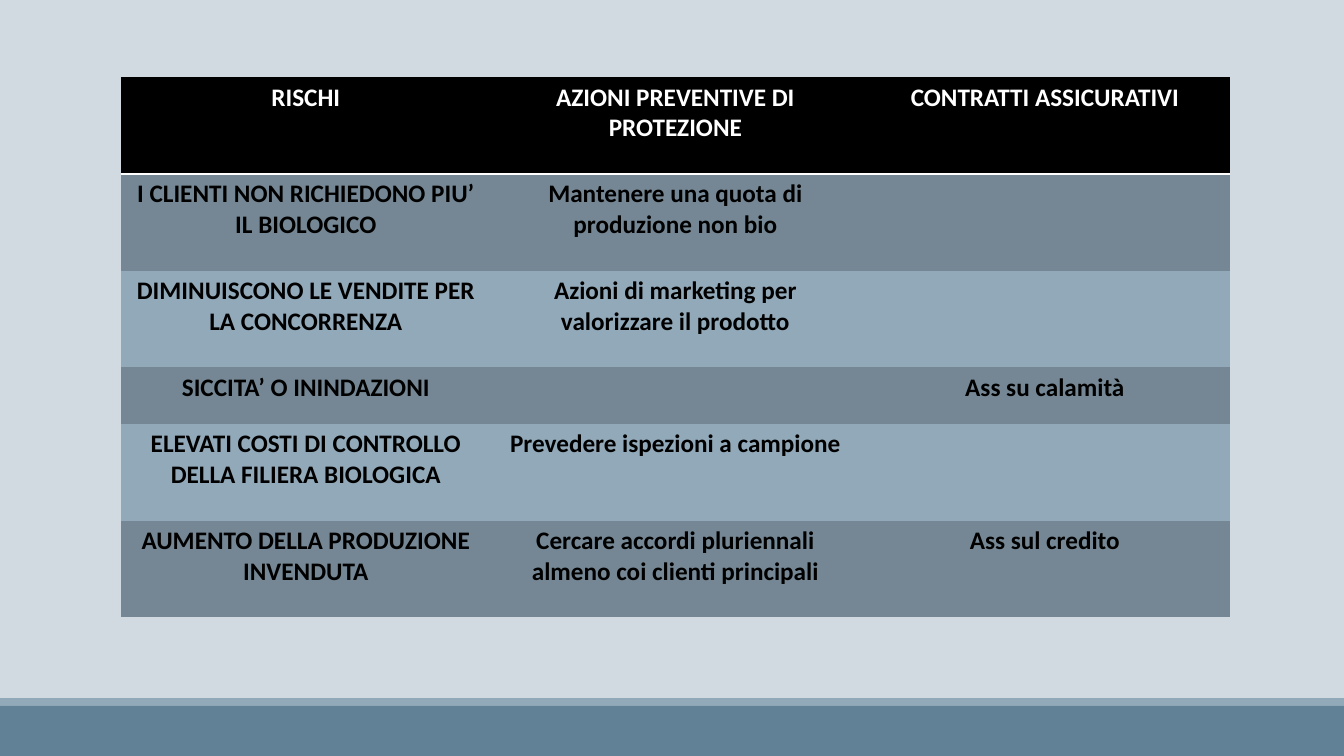
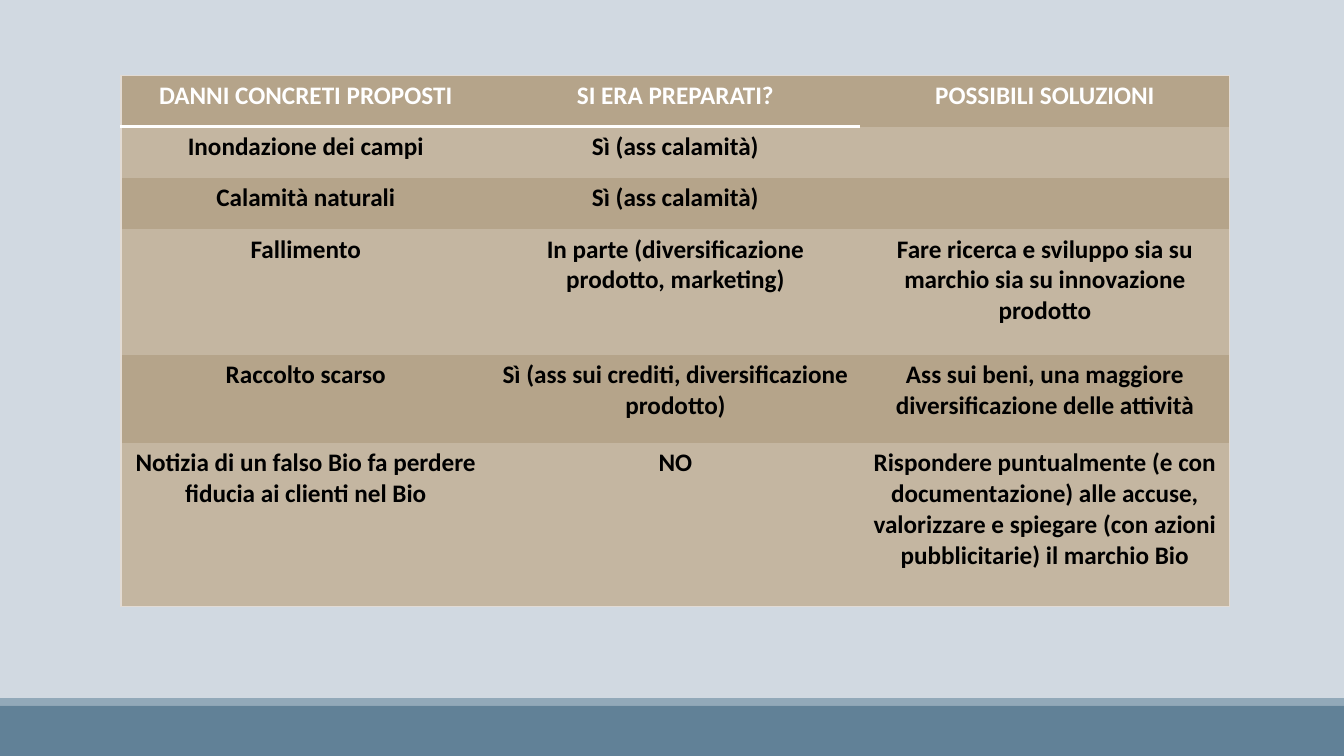
from dataclasses import dataclass

from lxml import etree
from pptx import Presentation
from pptx.dml.color import RGBColor
from pptx.enum.shapes import MSO_SHAPE
from pptx.enum.text import PP_ALIGN
from pptx.oxml.ns import qn
from pptx.util import Cm, Pt

RECTANGLE = MSO_SHAPE.RECTANGLE
CENTER = PP_ALIGN.CENTER
BLANK_LAYOUT = 6
PLAIN_TABLE_STYLE = "{2D5ABB26-0587-4C30-8999-92F81FD0307C}"


@dataclass(frozen=True)
class Theme:
    background: str = "D1D9E1"
    footer: str = "618197"
    footer_edge: str = "92A9B9"
    header_text: str = "FFFFFF"
    body_text: str = "000000"
    font: str = "Calibri"
    text_size: float = 18
    rule: str = "FFFFFF"
    rule_width: float = 2
    frame_width: float = 1


@dataclass(frozen=True)
class TablePalette:
    header: str
    odd_row: str
    even_row: str
    ruled_columns: int
    frame: str = ""


@dataclass(frozen=True)
class Box:
    left: int
    top: int
    width: int
    height: int


THEME = Theme()
SLATE = TablePalette("000000", "758794", "92A9B9", ruled_columns=3)
SAND = TablePalette("B5A48A", "C4B6A1", "B5A48A", ruled_columns=2, frame="E2DBD4")
PAGE_WIDTH, PAGE_HEIGHT = Cm(33.87), Cm(19.05)

RISKS = [
    ("RISCHI", "AZIONI PREVENTIVE DI PROTEZIONE", "CONTRATTI ASSICURATIVI"),
    ("I CLIENTI NON RICHIEDONO PIU’ IL BIOLOGICO",
     "Mantenere una quota di produzione non bio", ""),
    ("DIMINUISCONO LE VENDITE PER LA CONCORRENZA",
     "Azioni di marketing per valorizzare il prodotto", ""),
    ("SICCITA’ O ININDAZIONI", "", "Ass su calamità"),
    ("ELEVATI COSTI DI CONTROLLO DELLA FILIERA BIOLOGICA",
     "Prevedere ispezioni a campione", ""),
    ("AUMENTO DELLA PRODUZIONE INVENDUTA",
     "Cercare accordi pluriennali almeno coi clienti principali", "Ass sul credito"),
]
RISK_HEIGHTS = [2.44, 2.44, 2.44, 1.42, 2.44, 2.44]

DAMAGES = [
    ("DANNI CONCRETI PROPOSTI", "SI ERA PREPARATI?", "POSSIBILI SOLUZIONI"),
    ("Inondazione dei campi", "Sì (ass calamità)", ""),
    ("Calamità naturali", "Sì (ass calamità)", ""),
    ("Fallimento", "In parte (diversificazione prodotto, marketing)",
     "Fare ricerca e sviluppo sia su marchio sia su innovazione prodotto"),
    ("Raccolto scarso", "Sì (ass sui crediti, diversificazione prodotto)",
     "Ass sui beni, una maggiore diversificazione delle attività"),
    ("Notizia di un falso Bio fa perdere fiducia ai clienti nel Bio", "NO",
     "Rispondere puntualmente (e con documentazione) alle accuse, "
     "valorizzare e spiegare (con azioni pubblicitarie) il marchio Bio"),
]
DAMAGE_HEIGHTS = [1.29, 1.29, 1.29, 3.17, 2.22, 4.12]


def color(code):
    return RGBColor.from_string(code)


def add_band(page, box, fill):
    band = page.shapes.add_shape(RECTANGLE, box.left, box.top, box.width, box.height)
    band.shadow.inherit = False
    band.fill.solid()
    band.fill.fore_color.rgb = color(fill)
    band.line.fill.background()


def add_footer(page, box):
    edge_height = Cm(0.19)
    add_band(page, Box(box.left, box.top, box.width, edge_height), THEME.footer_edge)
    add_band(page, Box(box.left, box.top + edge_height, box.width,
                       box.height - edge_height), THEME.footer)


def add_border(cell, side, line_color, width):
    properties = cell._tc.get_or_add_tcPr()
    line = etree.SubElement(properties, qn(f"a:ln{side}"), w=str(Pt(width)))
    fill = etree.SubElement(line, qn("a:solidFill"))
    etree.SubElement(fill, qn("a:srgbClr"), val=line_color)


def border_cell(cell, row, column, last_row, last_column, palette):
    on_frame = {"L": column == 0, "R": column == last_column,
                "T": row == 0, "B": row == last_row}
    for side, outer in on_frame.items():
        if side == "B" and row == 0 and column < palette.ruled_columns:
            add_border(cell, side, THEME.rule, THEME.rule_width)
        elif outer and palette.frame:
            add_border(cell, side, palette.frame, THEME.frame_width)


def fill_cell(cell, text, fill, text_color):
    cell.fill.solid()
    cell.fill.fore_color.rgb = color(fill)
    cell.text_frame.text = text
    para = cell.text_frame.paragraphs[0]
    para.alignment = CENTER
    for span in para.runs:
        span.font.name = THEME.font
        span.font.size = Pt(THEME.text_size)
        span.font.bold = True
        span.font.color.rgb = color(text_color)


def add_grid(page, box, rows, heights, palette):
    column_count = len(rows[0])
    frame = page.shapes.add_table(len(rows), column_count,
                                  box.left, box.top, box.width, box.height)
    table = frame.table
    table._tbl.tblPr.find(qn("a:tableStyleId")).text = PLAIN_TABLE_STYLE
    table.horz_banding = False
    for column in table.columns:
        column.width = box.width // column_count
    for row, (texts, height) in enumerate(zip(rows, heights)):
        table.rows[row].height = Cm(height)
        if row == 0:
            fill, text_color = palette.header, THEME.header_text
        else:
            fill = palette.odd_row if row % 2 else palette.even_row
            text_color = THEME.body_text
        for column, text in enumerate(texts):
            cell = table.cell(row, column)
            border_cell(cell, row, column, len(rows) - 1, column_count - 1, palette)
            fill_cell(cell, text, fill, text_color)


def add_table_page(deck, top, rows, heights, palette):
    page = deck.slides.add_slide(deck.slide_layouts[BLANK_LAYOUT])
    footer_top = Cm(17.59)
    add_footer(page, Box(0, footer_top, PAGE_WIDTH, PAGE_HEIGHT - footer_top))
    box = Box(Cm(3.05), top, Cm(27.94), Cm(sum(heights)))
    add_grid(page, box, rows, heights, palette)


def main():
    deck = Presentation()
    deck.slide_width, deck.slide_height = PAGE_WIDTH, PAGE_HEIGHT
    background = deck.slide_master.background.fill
    background.solid()
    background.fore_color.rgb = color(THEME.background)
    add_table_page(deck, Cm(1.94), RISKS, RISK_HEIGHTS, SLATE)
    add_table_page(deck, Cm(1.9), DAMAGES, DAMAGE_HEIGHTS, SAND)
    deck.save("out.pptx")


if __name__ == "__main__":
    main()
